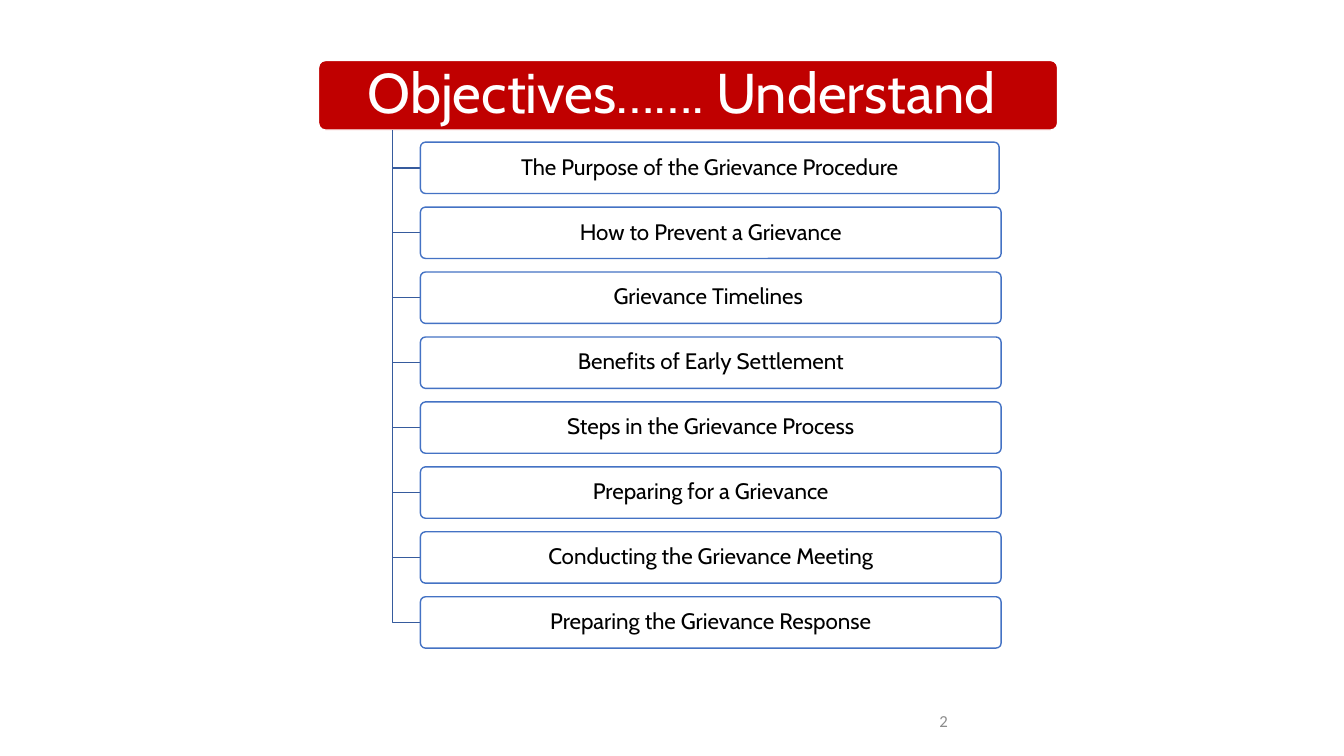
from pptx import Presentation
from pptx.dml.color import RGBColor
from pptx.enum.shapes import MSO_SHAPE
from pptx.enum.text import MSO_ANCHOR, PP_ALIGN
from pptx.util import Inches, Pt

WHITE = RGBColor(0xFF, 0xFF, 0xFF)
BLACK = RGBColor(0x00, 0x00, 0x00)
RED = RGBColor(0xC0, 0x00, 0x00)
BLUE = RGBColor(0x44, 0x72, 0xC4)
DARK_BLUE = RGBColor(0x36, 0x5B, 0x9D)
GRAY = RGBColor(0x8C, 0x8C, 0x8C)

TITLE = "Objectives……. Understand "
OBJECTIVES = [
    "The Purpose of the Grievance Procedure",
    "How to Prevent a Grievance",
    "Grievance Timelines ",
    "Benefits of Early Settlement",
    "Steps in the Grievance Process",
    "Preparing for a Grievance",
    "Conducting the Grievance Meeting",
    "Preparing the Grievance Response",
]

TRUNK_LEFT, TRUNK_TOP = 3.89, 1.29
BOX_LEFT, BOX_TOP, BOX_HEIGHT = 4.17, 1.41, 0.51
FIRST_BOX_WIDTH, BOX_WIDTH = 5.74, 5.76
LAST_BOX_TOP = 5.92


def write_text(shape, text, font_name, size, color, alignment):
    text_frame = shape.text_frame
    text_frame.text = text
    text_frame.word_wrap = True
    text_frame.vertical_anchor = MSO_ANCHOR.MIDDLE
    paragraph = text_frame.paragraphs[0]
    paragraph.alignment = alignment
    font = paragraph.runs[0].font
    font.name = font_name
    font.size = Pt(size)
    font.color.rgb = color
    return text_frame


def add_box(slide, text, left, top, width, height, fill, line, size, color, margins):
    shape = slide.shapes.add_shape(
        MSO_SHAPE.ROUNDED_RECTANGLE,
        Inches(left), Inches(top), Inches(width), Inches(height),
    )
    shape.adjustments[0] = 0.1
    shape.shadow.inherit = False
    shape.fill.solid()
    shape.fill.fore_color.rgb = fill
    shape.line.color.rgb = line
    shape.line.width = Pt(1)
    text_frame = write_text(shape, text, "Cabin", size, color, PP_ALIGN.CENTER)
    text_frame.paragraphs[0].line_spacing = 0.9
    side, end = margins
    text_frame.margin_left = text_frame.margin_right = Inches(side)
    text_frame.margin_top = text_frame.margin_bottom = Inches(end)


def add_branch(slide, middle):
    builder = slide.shapes.build_freeform(Inches(TRUNK_LEFT), Inches(TRUNK_TOP))
    builder.add_line_segments(
        [(Inches(TRUNK_LEFT), Inches(middle)), (Inches(BOX_LEFT), Inches(middle))],
        close=False,
    )
    branch = builder.convert_to_shape()
    branch.shadow.inherit = False
    branch.fill.background()
    branch.line.color.rgb = DARK_BLUE
    branch.line.width = Pt(1)


def add_slide_number(slide, number):
    box = slide.shapes.add_textbox(Inches(7.17), Inches(6.95), Inches(2.33), Inches(0.4))
    write_text(box, number, "Calibri", 12, GRAY, PP_ALIGN.RIGHT)


def main():
    presentation = Presentation()
    presentation.slide_width = Inches(13.33)
    presentation.slide_height = Inches(7.5)
    slide = presentation.slides.add_slide(presentation.slide_layouts[6])

    add_box(slide, TITLE, 3.16, 0.6, 7.33, 0.69, RED, WHITE, 40, WHITE, (0.1, 0.08))
    pitch = (LAST_BOX_TOP - BOX_TOP) / (len(OBJECTIVES) - 1)
    for index, objective in enumerate(OBJECTIVES):
        top = BOX_TOP + index * pitch
        width = BOX_WIDTH if index else FIRST_BOX_WIDTH
        add_branch(slide, top + BOX_HEIGHT / 2)
        add_box(slide, objective, BOX_LEFT, top, width, BOX_HEIGHT,
                WHITE, BLUE, 16, BLACK, (0.05, 0.04))
    add_slide_number(slide, "2")

    presentation.save("out.pptx")


if __name__ == "__main__":
    main()
